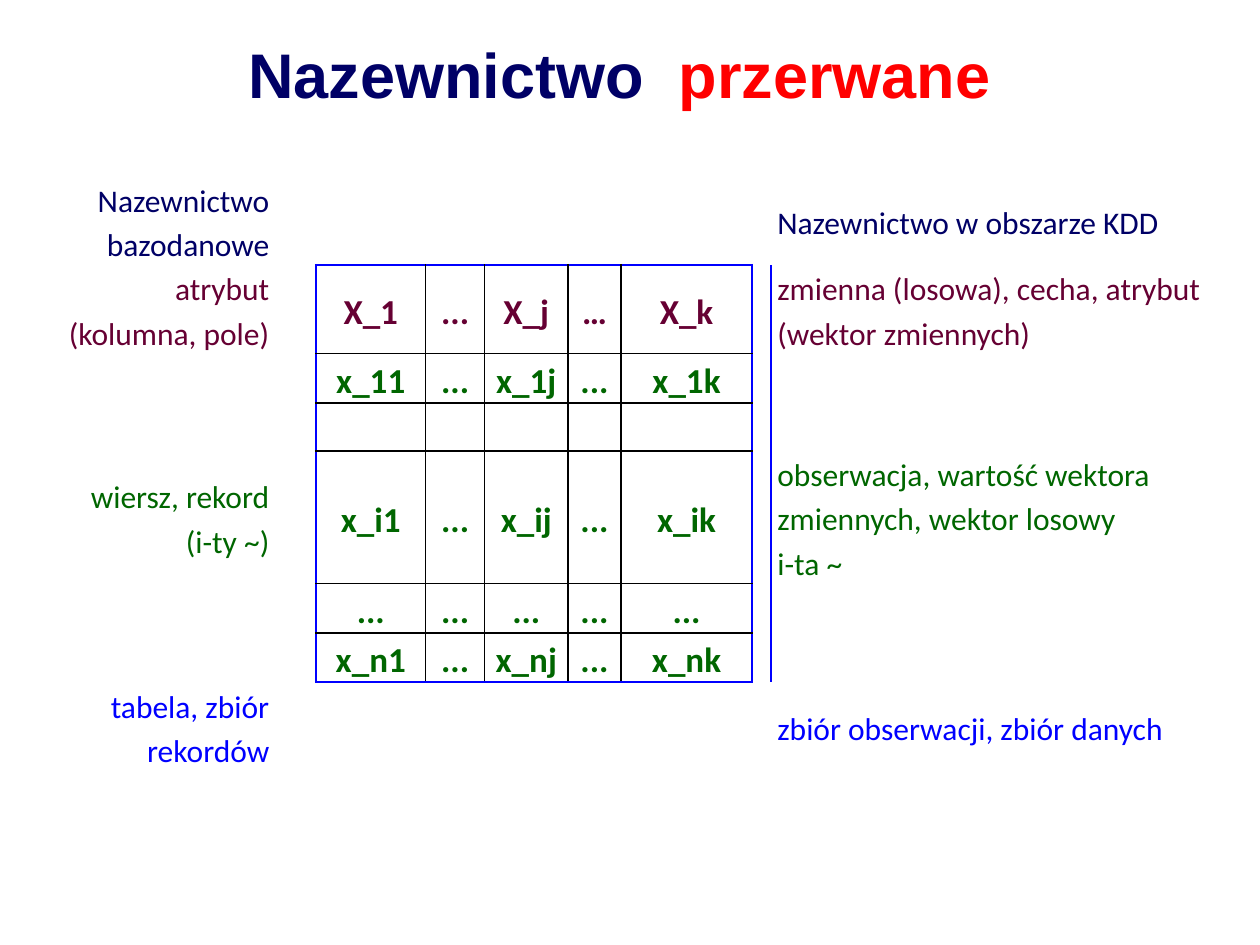
from dataclasses import dataclass

from lxml.etree import fromstring
from pptx import Presentation
from pptx.dml.color import RGBColor
from pptx.enum.text import MSO_ANCHOR, MSO_AUTO_SIZE, PP_ALIGN
from pptx.util import Cm, Pt


@dataclass(frozen=True)
class Theme:
    navy: str = "000066"
    red: str = "FF0000"
    maroon: str = "660033"
    green: str = "006600"
    blue: str = "0000FF"
    black: str = "000000"
    title_font: str = "Arial"
    body_font: str = "Calibri"
    title_size: int = 36
    label_size: int = 18
    matrix_size: int = 20
    frame_width: float = 1.5
    grid_width: float = 1


theme = Theme()
DRAWING_NS = "http://schemas.openxmlformats.org/drawingml/2006/main"
NO_STYLE = "{2D5ABB26-0587-4C30-8999-92F81FD0307C}"


def format_run(run, color, **font_values):
    for attribute, value in font_values.items():
        setattr(run.font, attribute, value)
    run.font.color.rgb = RGBColor.from_string(color)


def in_matrix(row, column):
    return 1 <= row <= 6 and 2 <= column <= 6


presentation = Presentation()
presentation.slide_width = Cm(25.4)
presentation.slide_height = Cm(19.05)
slide = presentation.slides.add_slide(presentation.slide_layouts[5])

heading = slide.shapes.title
heading_place = {"left": Cm(0.1), "top": Cm(0.43), "width": Cm(24.77), "height": Cm(2.11)}
for attribute, value in heading_place.items():
    setattr(heading, attribute, value)
heading.text_frame.auto_size = MSO_AUTO_SIZE.NONE
heading.text_frame.vertical_anchor = MSO_ANCHOR.MIDDLE
heading_line = heading.text_frame.paragraphs[0]
heading_line.alignment = PP_ALIGN.CENTER
for words, color in (("Nazewnictwo  ", theme.navy), ("przerwane", theme.red)):
    run = heading_line.add_run()
    run.text = words
    format_run(run, color, name=theme.title_font, size=Pt(theme.title_size), bold=True)

terms = [
    (1.75, theme.navy, "Nazewnictwo\nbazodanowe", "", "Nazewnictwo w obszarze KDD"),
    (1.75, theme.maroon, "atrybut\v(kolumna, pole)", "X_1 ... X_j … X_k",
     "zmienna (losowa), cecha, atrybut\n(wektor zmiennych)"),
    (0.97, theme.green, "", "x_11 ... x_1j ... x_1k", ""),
    (0.97, theme.green, "", "", ""),
    (2.64, theme.green, "wiersz, rekord\v(i-ty ~)", "x_i1 ... x_ij ... x_ik",
     "obserwacja, wartość wektora zmiennych, wektor losowy\ni-ta ~"),
    (0.97, theme.green, "", "... ... ... ... ...", ""),
    (0.97, theme.green, "", "x_n1 ... x_nj ... x_nk", ""),
    (1.75, theme.blue, "tabela, zbiór rekordów", "", "zbiór obserwacji, zbiór danych"),
]
column_widths = [4.47, 0.81, 2.21, 1.19, 1.68, 1.07, 2.64, 0.38, 9.32]
top_anchored_rows = (2, 5, 6)
neighbours = {"lnL": (0, -1), "lnR": (0, 1), "lnT": (-1, 0), "lnB": (1, 0)}

glossary_frame = slide.shapes.add_table(
    len(terms), len(column_widths), Cm(1.09), Cm(3.56),
    Cm(sum(column_widths)), Cm(sum(term[0] for term in terms)))
glossary = glossary_frame.table
glossary.first_row = False
glossary.horz_banding = False
glossary_frame._element.find(f".//{{{DRAWING_NS}}}tableStyleId").text = NO_STYLE
for column, width in zip(glossary.columns, column_widths):
    column.width = Cm(width)

cell_format = {"margin_left": Cm(0.13), "margin_right": Cm(0.13),
               "margin_top": 0, "margin_bottom": 0}

for row, (height, color, database_term, symbols, mining_term) in enumerate(terms):
    glossary.rows[row].height = Cm(height)
    wording = {0: database_term, 8: mining_term}
    wording.update(enumerate(symbols.split(), start=2))
    for column in range(len(column_widths)):
        cell = glossary.cell(row, column)
        inside = in_matrix(row, column)
        for attribute, value in cell_format.items():
            setattr(cell, attribute, value)
        at_top = inside and row in top_anchored_rows
        cell.vertical_anchor = MSO_ANCHOR.TOP if at_top else MSO_ANCHOR.MIDDLE
        cell.fill.background()

        cell.text_frame.text = wording.get(column, "")
        for paragraph in cell.text_frame.paragraphs:
            paragraph.line_spacing = 1.15
            paragraph.alignment = (PP_ALIGN.CENTER if inside else
                                   PP_ALIGN.RIGHT if column == 0 else PP_ALIGN.LEFT)
            for run in paragraph.runs:
                format_run(run, color, name=theme.body_font, bold=inside,
                           size=Pt(theme.matrix_size if inside else theme.label_size))

        borders = []
        for side, (down, across) in neighbours.items():
            beyond = in_matrix(row + down, column + across)
            if inside or beyond:
                line_color, line_width = (
                    (theme.black, theme.grid_width) if inside and beyond
                    else (theme.blue, theme.frame_width))
                borders.append(fromstring(
                    f'<a:{side} xmlns:a="{DRAWING_NS}" w="{Pt(line_width)}"><a:solidFill>'
                    f'<a:srgbClr val="{line_color}"/></a:solidFill></a:{side}>'))
        properties = cell._tc.get_or_add_tcPr()
        for position, border in enumerate(borders):
            properties.insert(position, border)

presentation.save("out.pptx")
